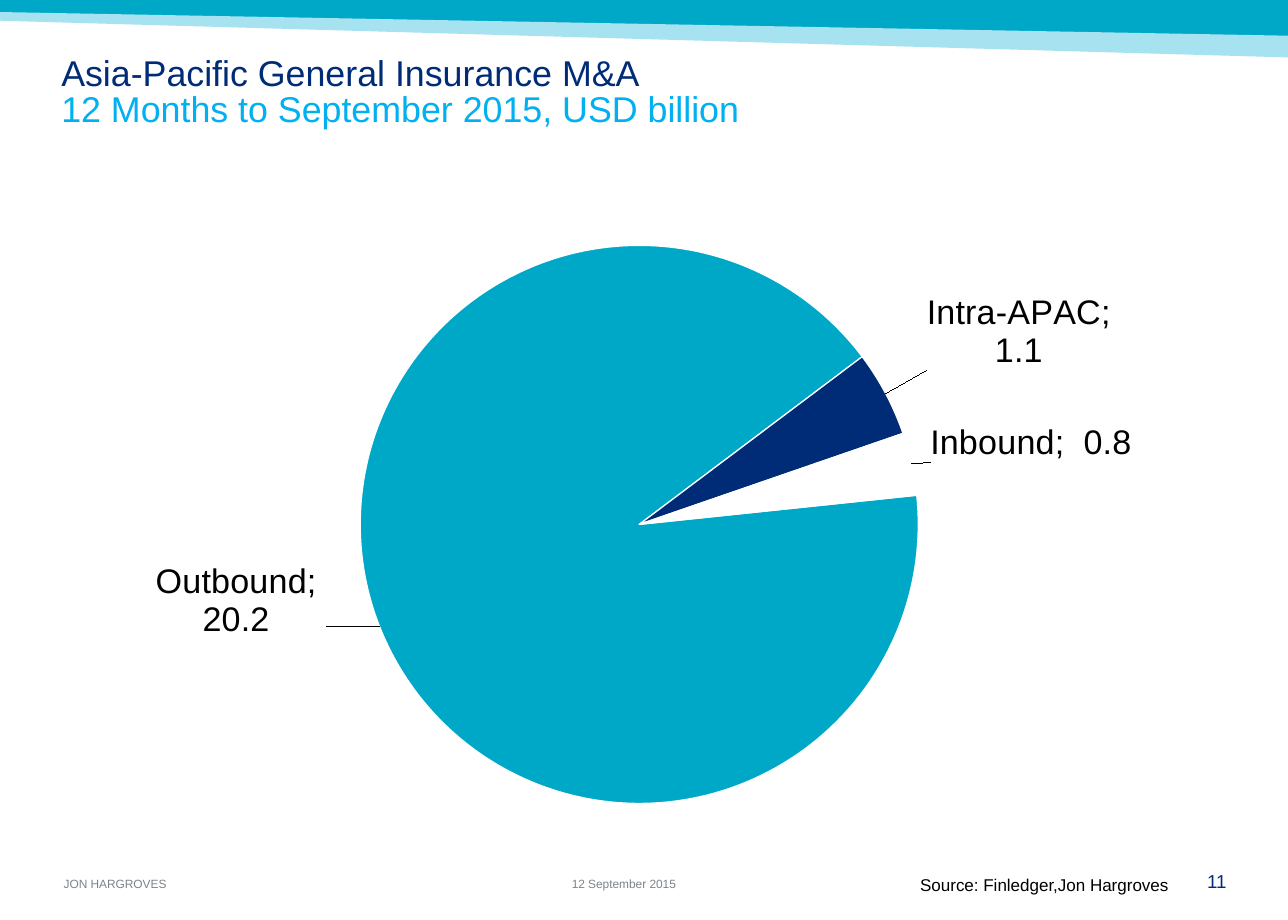
from dataclasses import dataclass

from lxml.etree import SubElement
from pptx import Presentation
from pptx.chart.data import CategoryChartData
from pptx.chart.series import PieSeries
from pptx.dml.color import RGBColor
from pptx.enum.chart import XL_CHART_TYPE, XL_LABEL_POSITION
from pptx.enum.text import MSO_ANCHOR, PP_ALIGN
from pptx.oxml import parse_xml
from pptx.oxml.ns import nsdecls, qn
from pptx.slide import Slide
from pptx.util import Cm, Pt


@dataclass(frozen=True)
class Theme:
    font: str = "Arial"
    teal: str = "00A8C8"
    pale_teal: str = "A6E2EF"
    navy: str = "002C77"
    sky: str = "00B0F0"
    grey: str = "7C848A"
    black: str = "000000"
    white: str = "FFFFFF"
    title_size: float = 21
    label_size: float = 20
    number_size: float = 11
    source_size: float = 10
    footer_size: float = 7


THEME = Theme()
NUMBER_FORMAT = r'_(* #,##0.0_);_(* \(#,##0.0\);_(* "-"??_);_(@_)'


@dataclass(frozen=True)
class Band:
    color: str
    corners: tuple[tuple[float, float], ...]


@dataclass(frozen=True)
class Line:
    text: str
    color: str


@dataclass(frozen=True)
class Label:
    box: tuple[float, float, float, float]
    lines: tuple[Line, ...]
    size: float
    margins: tuple[float, float, float, float] = (0, 0, 0, 0)
    anchor: MSO_ANCHOR = MSO_ANCHOR.TOP
    align: PP_ALIGN = PP_ALIGN.LEFT
    spacing: float = 1.0


@dataclass(frozen=True)
class Slice:
    name: str
    value: float
    color: str
    label_shift: tuple[float, float]


BANDS = (
    Band(THEME.teal, ((0, 0), (26.67, 0), (26.67, 0.81), (0, 0.3))),
    Band(THEME.pale_teal, ((0, 0.25), (26.67, 0.74), (26.67, 1.19), (0, 0.43))),
)
LABELS = (
    Label((1.32, 18.16, 8.03, 0.28), (Line("JON HARGROVES", THEME.grey),),
          THEME.footer_size, anchor=MSO_ANCHOR.BOTTOM),
    Label((1.27, 1.07, 24.13, 1.93),
          (Line("Asia-Pacific General Insurance M&A", THEME.navy),
           Line("12 Months to September 2015, USD billion", THEME.sky)),
          THEME.title_size, margins=(0, 0.13, 0.25, 0.13), spacing=0.83),
    Label((24.16, 18.01, 1.24, 0.46), (Line("11", THEME.navy),),
          THEME.number_size, align=PP_ALIGN.RIGHT),
    Label((11.84, 18.14, 3, 0.3), (Line("12 September 2015", THEME.grey),),
          THEME.footer_size, anchor=MSO_ANCHOR.BOTTOM),
    Label((17.68, 18.03, 6.76, 0.64),
          (Line("Source: Finledger,Jon Hargroves", THEME.black),),
          THEME.source_size, margins=(0.25, 0.13, 0.25, 0.13),
          align=PP_ALIGN.RIGHT, spacing=0.86),
)
SLICES = (
    Slice("Outbound", 20.2, THEME.teal, (-0.04, -0.1)),
    Slice("Intra-APAC", 1.1, THEME.navy, (0.03, -0.03)),
    Slice("Inbound", 0.8, THEME.white, (0.01, 0)),
)


def add_band(slide: Slide, band: Band) -> None:
    """Draw one slanted header band."""
    corners = [(Cm(x), Cm(y)) for x, y in band.corners]
    builder = slide.shapes.build_freeform(*corners[0])
    builder.add_line_segments(corners[1:], close=True)
    shape = builder.convert_to_shape()
    shape.shadow.inherit = False
    shape.fill.solid()
    shape.fill.fore_color.rgb = RGBColor.from_string(band.color)
    shape.line.fill.background()


def add_label(slide: Slide, label: Label) -> None:
    """Write a text box whose lines share one paragraph."""
    frame = slide.shapes.add_textbox(*map(Cm, label.box)).text_frame
    frame.word_wrap = True
    frame.vertical_anchor = label.anchor
    (frame.margin_left, frame.margin_top,
     frame.margin_right, frame.margin_bottom) = map(Cm, label.margins)
    paragraph = frame.paragraphs[0]
    paragraph.alignment = label.align
    paragraph.line_spacing = label.spacing
    for index, line in enumerate(label.lines):
        if index:
            paragraph.add_line_break()
        run = paragraph.add_run()
        run.text = line.text
        run.font.name = THEME.font
        run.font.size = Pt(label.size)
        run.font.color.rgb = RGBColor.from_string(line.color)


def manual_layout(**settings: str | float):
    """Build a chart layout element from its settings."""
    layout = parse_xml(f"<c:layout {nsdecls('c')}><c:manualLayout/></c:layout>")
    for name, value in settings.items():
        SubElement(layout[0], qn(f"c:{name}")).set("val", str(value))
    return layout


def style_slice(series: PieSeries, index: int, part: Slice) -> None:
    """Colour one slice and place its label."""
    point = series.points[index]
    point.format.fill.solid()
    point.format.fill.fore_color.rgb = RGBColor.from_string(part.color)
    point.format.line.color.rgb = RGBColor.from_string(THEME.white)
    point.format.line.width = Pt(0.75)
    label = point.data_label
    label.font.size = Pt(THEME.label_size)
    label.font.name = THEME.font
    label.font.color.rgb = RGBColor.from_string(THEME.black)
    label.position = XL_LABEL_POSITION.OUTSIDE_END
    element = series.data_labels._element.findall(qn("c:dLbl"))[index]
    element.find(qn("c:showCatName")).set("val", "1")
    SubElement(element, qn("c:separator")).text = "; "
    horizontal, vertical = part.label_shift
    element.insert(1, manual_layout(x=horizontal, y=vertical))
    number_format = element.makeelement(
        qn("c:numFmt"), {"formatCode": NUMBER_FORMAT, "sourceLinked": "0"})
    element.insert(2, number_format)


def add_pie(slide: Slide) -> None:
    """Add the pie of deal values."""
    data = CategoryChartData(number_format=NUMBER_FORMAT)
    data.categories = [part.name for part in SLICES]
    data.add_series("Series 1", [part.value for part in SLICES])
    chart = slide.shapes.add_chart(
        XL_CHART_TYPE.PIE, Cm(1.27), Cm(3.56), Cm(24.13), Cm(13.84), data).chart
    chart.has_legend = False
    chart.has_title = False
    chart.font.name = THEME.font
    chart.font.size = Pt(THEME.source_size)
    chart.font.color.rgb = RGBColor.from_string(THEME.black)
    plot = chart.plots[0]
    plot.vary_by_categories = True
    for index, part in enumerate(SLICES):
        style_slice(plot.series[0], index, part)
    pie = plot._element
    angle = pie.find(qn("c:firstSliceAng"))
    if angle is None:
        angle = SubElement(pie, qn("c:firstSliceAng"))
    angle.set("val", "84")
    area = pie.getparent()
    for layout in area.findall(qn("c:layout")):
        area.remove(layout)
    area.insert(0, manual_layout(layoutTarget="inner", xMode="edge", yMode="edge",
                                 x=0.256, y=0.11, w=0.48, h=0.835))


def main() -> None:
    """Build and save the slide."""
    presentation = Presentation()
    presentation.slide_width, presentation.slide_height = Cm(26.67), Cm(19.05)
    slide = presentation.slides.add_slide(presentation.slide_layouts[6])
    for band in BANDS:
        add_band(slide, band)
    add_pie(slide)
    for label in LABELS:
        add_label(slide, label)
    presentation.save("out.pptx")


if __name__ == "__main__":
    main()
